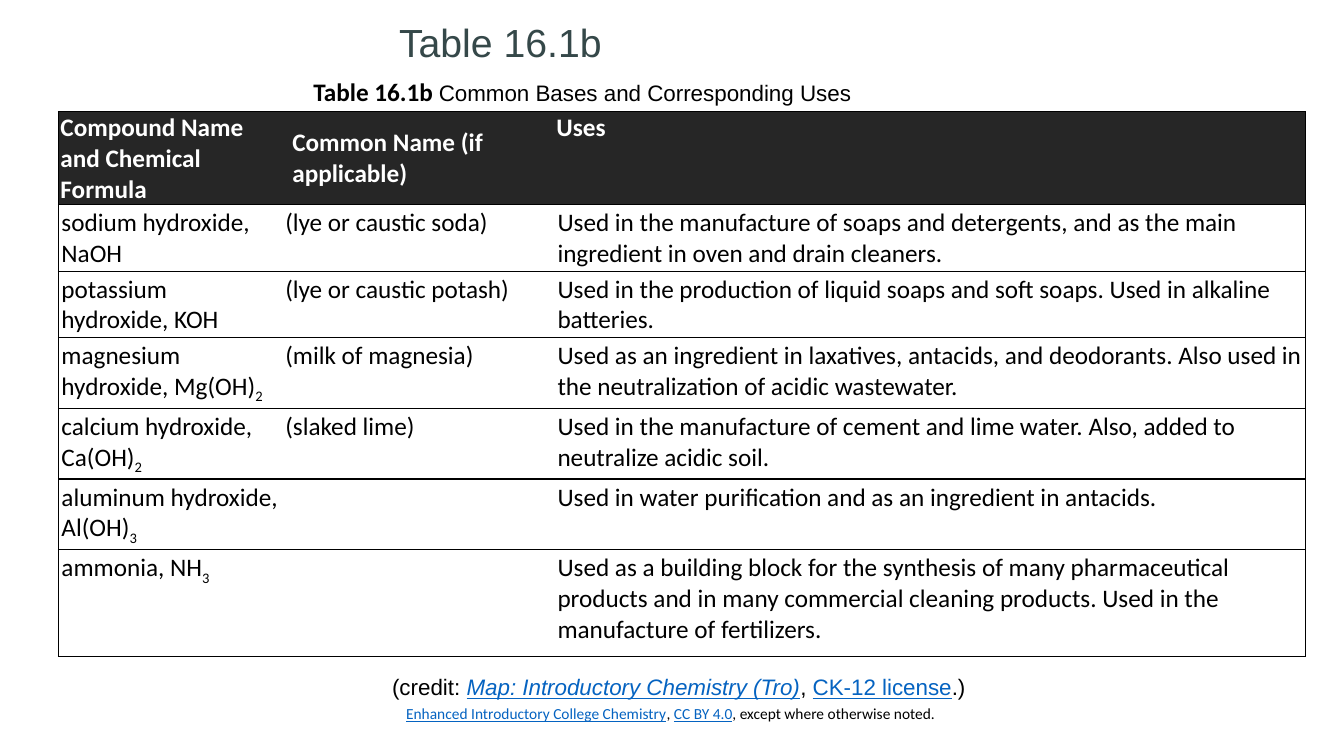
from typing import NamedTuple

from lxml.etree import SubElement
from pptx import Presentation
from pptx.dml.color import RGBColor
from pptx.enum.text import MSO_ANCHOR as Anchor, MSO_AUTO_SIZE as AutoSize
from pptx.oxml.ns import qn
from pptx.util import Inches, Pt

BLACK, WHITE, HEADER, LINK, TITLE = "000000", "FFFFFF", "262626", "0563C1", "354849"


class Span(NamedTuple):
    text: str
    color: str = ""
    bold: bool = False
    italic: bool = False
    underline: bool = False
    size: float = 0
    font: str = ""
    subscript: bool = False


class Note(NamedTuple):
    left: float
    top: float
    width: float
    height: float
    spans: list[Span]
    size: float
    font: str
    color: str = BLACK
    anchor: Anchor = Anchor.TOP
    wrap: bool = True
    auto_size: AutoSize = AutoSize.NONE
    line_spacing: float = 1.0


class Base(NamedTuple):
    compound: str
    subscript: str
    common_name: str
    uses: str


NOTES = [
    Note(3.93, 6.94, 7.07, 0.4, [
        Span("Enhanced Introductory College Chemistry", LINK, underline=True),
        Span(", "),
        Span("CC BY 4.0", LINK, underline=True),
        Span(", except where otherwise noted."),
    ], 11, "Calibri"),
    Note(3.86, 0, 2.27, 0.7, [Span("Table 16.1b")], 28, "Arial", TITLE,
         Anchor.BOTTOM, line_spacing=0.9),
    Note(3.01, 0.71, 8.11, 0.4, [
        Span("Table 16.1b ", bold=True, size=18, font="Calibri"),
        Span("Common Bases and Corresponding Uses"),
    ], 16, "Arial", auto_size=AutoSize.SHAPE_TO_FIT_TEXT),
    Note(3.79, 6.63, 6.15, 0.37, [
        Span("(credit: "),
        Span("Map: Introductory Chemistry (Tro)", LINK, italic=True, underline=True),
        Span(", "),
        Span("CK-12 license", LINK, underline=True),
        Span(".)"),
    ], 16, "Arial", wrap=False, auto_size=AutoSize.SHAPE_TO_FIT_TEXT),
]

HEADINGS = ["Compound Name and Chemical Formula", "Common Name (if applicable)", "Uses"]
BASES = [
    Base("sodium hydroxide, NaOH", "", "(lye or caustic soda)",
         "Used in the manufacture of soaps and detergents, and as the main "
         "ingredient in oven and drain cleaners."),
    Base("potassium hydroxide, KOH", "", "(lye or caustic potash)",
         "Used in the production of liquid soaps and soft soaps. Used in alkaline batteries."),
    Base("magnesium hydroxide, Mg(OH)", "2", "(milk of magnesia)",
         "Used as an ingredient in laxatives, antacids, and deodorants. Also used "
         "in the neutralization of acidic wastewater."),
    Base("calcium hydroxide, Ca(OH)", "2", "(slaked lime)",
         "Used in the manufacture of cement and lime water. Also, added to "
         "neutralize acidic soil."),
    Base("aluminum hydroxide, Al(OH)", "3", "",
         "Used in water purification and as an ingredient in antacids."),
    Base("ammonia, NH", "3", "",
         "Used as a building block for the synthesis of many pharmaceutical products "
         "and in many commercial cleaning products. Used in the manufacture of fertilizers."),
]
COLUMN_WIDTHS = [2.22, 2.7, 7.45]
ROW_HEIGHTS = [0.81, 0.63, 0.59, 0.65, 0.67, 0.67, 1.06]


def rgb(color: str) -> RGBColor:
    return RGBColor.from_string(color)


def write(paragraph, spans: list[Span], size: float, font: str, color: str,
          bold: bool = False) -> None:
    """Set the paragraph's font and add its spans, each with its own differences."""
    paragraph.font.size = Pt(size)
    paragraph.font.name = font
    paragraph.font.bold = bold
    paragraph.font.color.rgb = rgb(color)
    for span in spans:
        run = paragraph.add_run()
        run.text = span.text
        if span.color:
            run.font.color.rgb = rgb(span.color)
        if span.size:
            run.font.size = Pt(span.size)
        if span.font:
            run.font.name = span.font
        for style in ("bold", "italic", "underline"):
            if getattr(span, style):
                setattr(run.font, style, True)
        if span.subscript:
            run._r.get_or_add_rPr().set("baseline", "-25000")


def add_note(slide, note: Note) -> None:
    box = slide.shapes.add_textbox(Inches(note.left), Inches(note.top),
                                   Inches(note.width), Inches(note.height))
    frame = box.text_frame
    frame.word_wrap = note.wrap
    frame.auto_size = note.auto_size
    frame.vertical_anchor = note.anchor
    paragraph = frame.paragraphs[0]
    paragraph.line_spacing = note.line_spacing
    write(paragraph, note.spans, note.size, note.font, note.color)


def set_borders(cell, drawn_sides: str) -> None:
    properties = cell._tc.get_or_add_tcPr()
    for side in "LRTB":
        line = SubElement(properties, qn(f"a:ln{side}"), w=str(Pt(1)))
        if side in drawn_sides:
            fill = SubElement(line, qn("a:solidFill"))
            SubElement(fill, qn("a:srgbClr"), val=BLACK)
        else:
            SubElement(line, qn("a:noFill"))


def fill_cell(cell, spans: list[Span], column: int, is_header: bool) -> None:
    set_borders(cell, ("LTB", "TB", "RTB")[column])
    cell.fill.solid()
    cell.fill.fore_color.rgb = rgb(HEADER if is_header else WHITE)
    if is_header and column == 1:
        cell.vertical_anchor = Anchor.MIDDLE
    else:
        cell.margin_left = cell.margin_right = Inches(0.02 if is_header else 0.03)
        cell.margin_top = cell.margin_bottom = Inches(0.01 if is_header else 0.03)
    write(cell.text_frame.paragraphs[0], spans, 18, "Calibri",
          WHITE if is_header else BLACK, bold=is_header)


def add_bases_table(slide) -> None:
    rows = [[[Span(heading)] for heading in HEADINGS]]
    for base in BASES:
        compound = [Span(base.compound)]
        if base.subscript:
            compound.append(Span(base.subscript, subscript=True))
        common_name = [Span(base.common_name)] if base.common_name else []
        rows.append([compound, common_name, [Span(base.uses)]])

    table = slide.shapes.add_table(len(rows), len(HEADINGS), Inches(0.58), Inches(1.11),
                                   Inches(12.36), Inches(5.32)).table
    table.horz_banding = False
    for column, width in zip(table.columns, COLUMN_WIDTHS):
        column.width = Inches(width)
    for row, height in zip(table.rows, ROW_HEIGHTS):
        row.height = Inches(height)
    for r, row_spans in enumerate(rows):
        for c, spans in enumerate(row_spans):
            fill_cell(table.cell(r, c), spans, c, is_header=r == 0)


def main() -> None:
    deck = Presentation()
    deck.slide_width, deck.slide_height = Inches(13.33), Inches(7.5)
    slide = deck.slides.add_slide(deck.slide_layouts[6])
    for note in NOTES:
        add_note(slide, note)
    add_bases_table(slide)
    deck.save("out.pptx")


if __name__ == "__main__":
    main()
